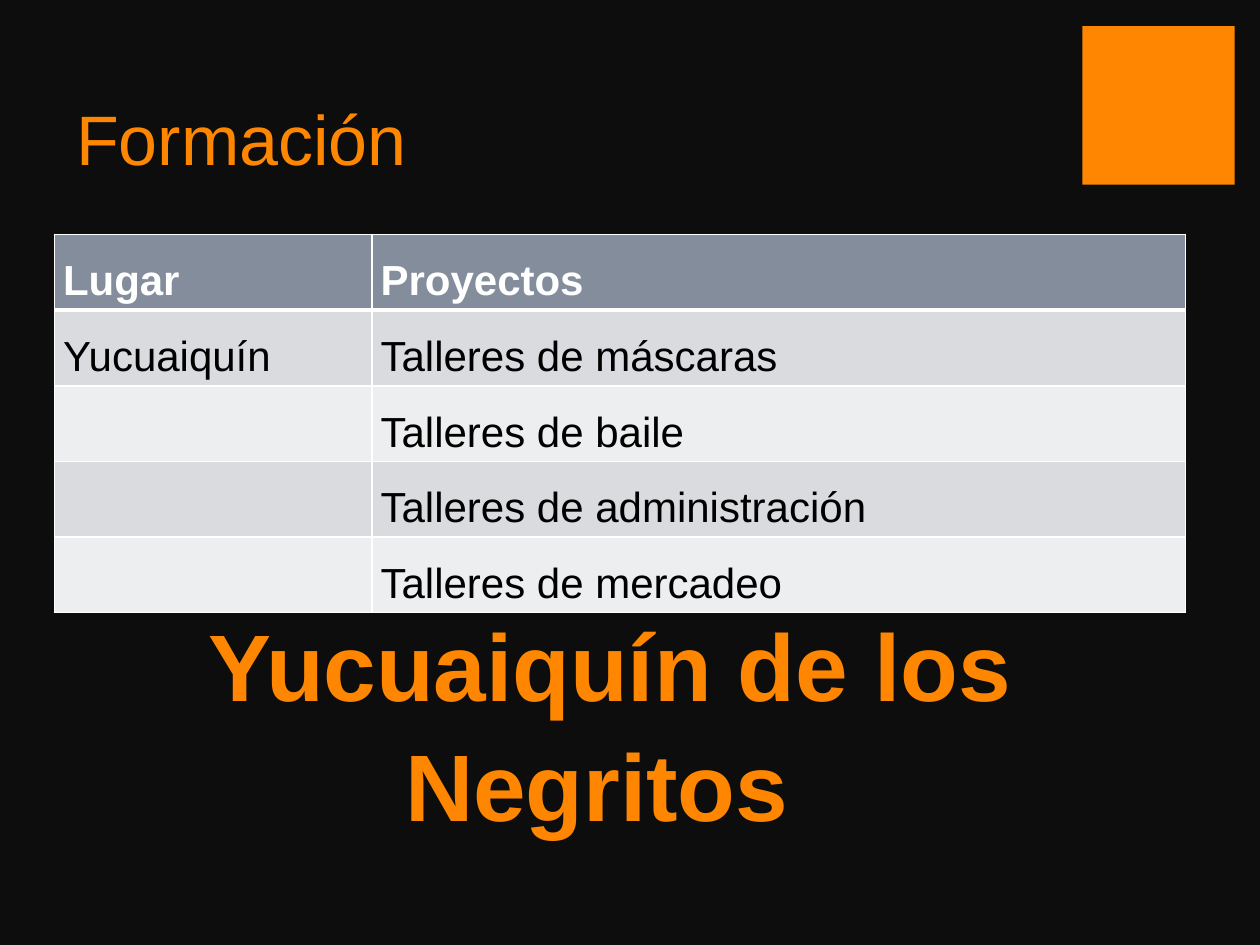
from lxml.etree import SubElement
from pptx import Presentation
from pptx.dml.color import RGBColor
from pptx.enum.shapes import MSO_SHAPE
from pptx.enum.text import MSO_ANCHOR, PP_ALIGN
from pptx.oxml.ns import qn
from pptx.util import Pt

COLORS = {
    "background": "0D0D0D", "accent": "FF8600", "header": "838D9B",
    "odd": "D9DBDE", "even": "EDEEEF", "white": "FFFFFF", "black": "000000",
}
ROWS = [
    ("Lugar", "Proyectos"),
    ("Yucuaiquín", "Talleres de máscaras"),
    ("", "Talleres de baile"),
    ("", "Talleres de administración"),
    ("", "Talleres de mercadeo"),
]


def rgb(name):
    return RGBColor.from_string(COLORS[name])


class Deck:
    """Holds the style and the current slide; all lengths are in points."""
    font = "Arial"

    def __init__(self, width, height):
        self.prs = Presentation()
        self.prs.slide_width, self.prs.slide_height = Pt(width), Pt(height)
        self.slide = self.prs.slides.add_slide(self.prs.slide_layouts[6])
        fill = self.slide.background.fill
        fill.solid()
        fill.fore_color.rgb = rgb("background")

    def style(self, p, size, color, bold=False):
        for r in p.runs:
            r.font.name, r.font.size, r.font.bold = self.font, Pt(size), bold
            r.font.color.rgb = rgb(color)

    def rect(self, x, y, w, h, color):
        sp = self.slide.shapes.add_shape(MSO_SHAPE.RECTANGLE, Pt(x), Pt(y), Pt(w), Pt(h))
        sp.shadow.inherit = False
        sp.fill.solid()
        sp.fill.fore_color.rgb = rgb(color)
        sp.line.fill.background()

    def text(self, x, y, w, h, text, size, bold=False):
        """Add a wrapped, bottom-anchored box and return its text frame."""
        tf = self.slide.shapes.add_textbox(Pt(x), Pt(y), Pt(w), Pt(h)).text_frame
        tf.word_wrap = True
        tf.vertical_anchor = MSO_ANCHOR.BOTTOM
        tf.text = text
        self.style(tf.paragraphs[0], size, "accent", bold)
        return tf

    def borders(self, cell, bottom):
        """Put white borders before the cell's fill, as the schema orders them."""
        tc_pr = cell._tc.get_or_add_tcPr()
        for i, (side, width) in enumerate((("L", 1), ("R", 1), ("T", 1), ("B", bottom))):
            ln = SubElement(tc_pr, qn(f"a:ln{side}"), w=str(Pt(width)))
            fill = SubElement(ln, qn("a:solidFill"))
            SubElement(fill, qn("a:srgbClr"), val=COLORS["white"])
            tc_pr.insert(i, ln)

    def cell(self, cell, text, fill, color, bold, bottom):
        cell.margin_left = cell.margin_right = Pt(5)
        cell.margin_top = cell.margin_bottom = 0
        cell.fill.solid()
        cell.fill.fore_color.rgb = rgb(fill)
        self.borders(cell, bottom)
        if text:
            cell.text_frame.text = text
            p = cell.text_frame.paragraphs[0]
            p.line_spacing, p.space_after = 1.5, Pt(6)
            self.style(p, 24, color, bold)

    def table(self, x, y, widths, row_height, rows):
        table = self.slide.shapes.add_table(
            len(rows), len(widths), Pt(x), Pt(y),
            Pt(sum(widths)), Pt(row_height * len(rows))).table
        for col, width in zip(table.columns, widths):
            col.width = Pt(width)
        for i, row in enumerate(rows):
            header = i == 0
            fill = "header" if header else "odd" if i % 2 else "even"
            color = "white" if header else "black"
            for j, text in enumerate(row):
                # Both sides of the header rule share its width
                self.cell(table.cell(i, j), text, fill, color, header, 3 if header else 1)
                if i == 1:
                    top = table.cell(i, j)._tc.tcPr.find(qn("a:lnT"))
                    top.set("w", str(Pt(3)))


def main():
    deck = Deck(720, 540)
    deck.rect(618.5, 15, 87, 90.5, "accent")
    deck.text(36.5, 15, 584, 91, "Formación", 40)
    deck.table(31, 134, (181.5, 465), 40, ROWS)

    tf = deck.text(42.5, 354, 576, 194, "Yucuaiquín de los Negritos ", 54, bold=True)
    tf.margin_left, tf.margin_bottom = Pt(43.2), Pt(68)
    p = tf.paragraphs[0]
    p.alignment, p.line_spacing = PP_ALIGN.CENTER, 1.05

    deck.prs.save("out.pptx")


if __name__ == "__main__":
    main()
